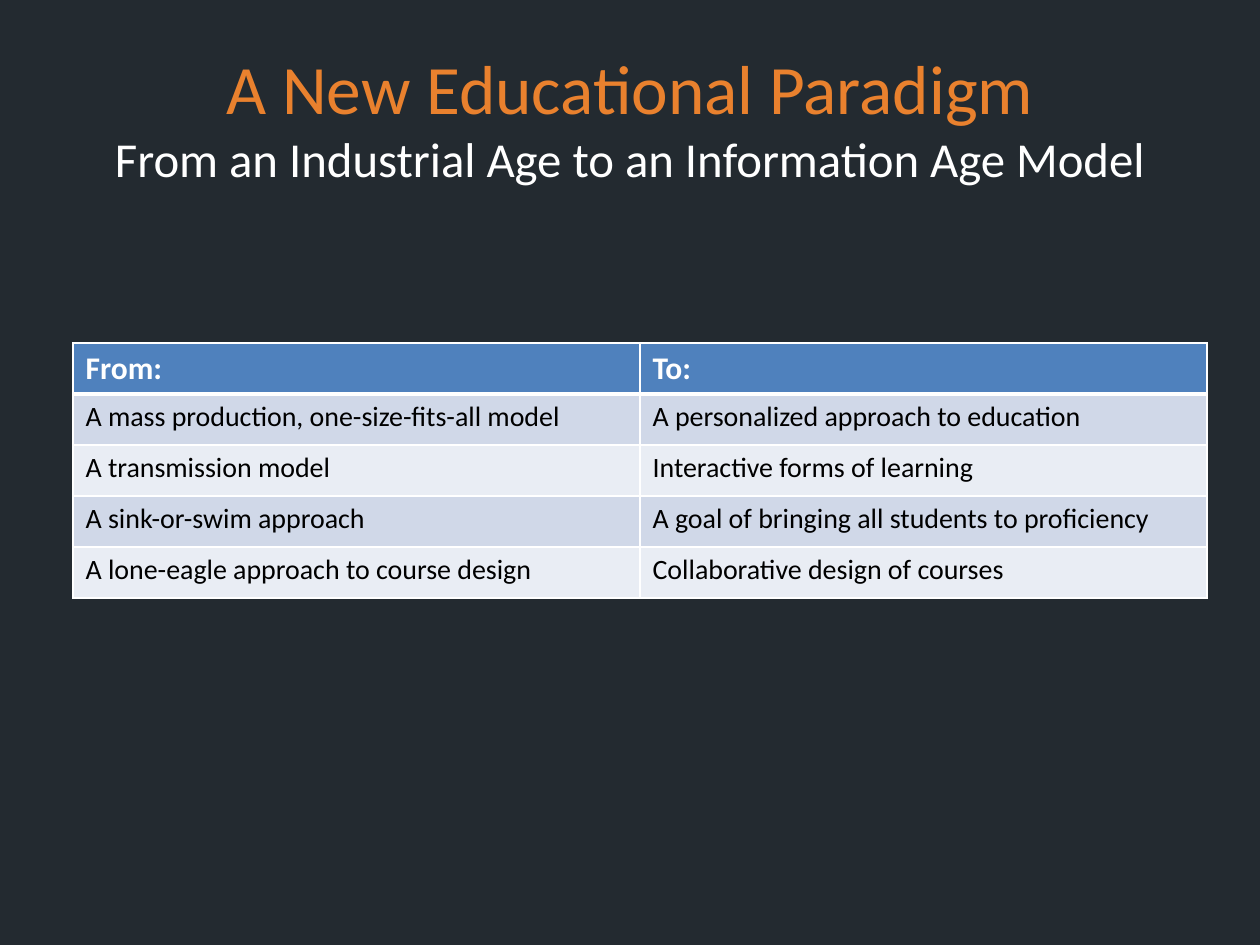
from typing import NamedTuple

from lxml import etree
from pptx import Presentation
from pptx.dml.color import RGBColor
from pptx.enum.text import MSO_ANCHOR, PP_ALIGN
from pptx.oxml.ns import qn
from pptx.util import Emu, Pt

MIDDLE = MSO_ANCHOR.MIDDLE
CENTER = PP_ALIGN.CENTER
EMU_PER_PX = 914400 / 126
FONT = "Calibri"
BACKGROUND = "232A30"
ORANGE = "E9812E"
WHITE = "FFFFFF"
BLACK = "000000"
HEADER_FILL = "4F81BD"
BAND_FILLS = ("D0D8E8", "E9EDF4")
ROW_HEIGHT = 51


class Box(NamedTuple):
    left: int
    top: int
    width: int
    height: int


class Style(NamedTuple):
    size: float
    color: str
    bold: bool = False


class Shift(NamedTuple):
    before: str
    after: str


HEADING = Style(39.6, ORANGE)
SUBHEADING = Style(27.9, WHITE)
HEADER = Style(18, WHITE, True)
BODY = Style(16, BLACK)

SHIFTS = (
    Shift("From:", "To:"),
    Shift("A mass production, one-size-fits-all model",
          "A personalized approach to education"),
    Shift("A transmission model", "Interactive forms of learning"),
    Shift("A sink-or-swim approach",
          "A goal of bringing all students to proficiency"),
    Shift("A lone-eagle approach to course design",
          "Collaborative design of courses"),
)


def px(length: int) -> Emu:
    return Emu(round(length * EMU_PER_PX))


def rgb(color: str) -> RGBColor:
    return RGBColor.from_string(color)


def add_run(paragraph, text: str, style: Style) -> None:
    run = paragraph.add_run()
    run.text = text
    run.font.name = FONT
    run.font.size = Pt(style.size)
    run.font.bold = style.bold
    run.font.color.rgb = rgb(style.color)


def add_title(slide, box: Box) -> None:
    frame = slide.shapes.add_textbox(*map(px, box)).text_frame
    frame.word_wrap = True
    frame.vertical_anchor = MIDDLE
    paragraph = frame.paragraphs[0]
    paragraph.alignment = CENTER
    add_run(paragraph, "A New Educational Paradigm", HEADING)
    paragraph.add_line_break()
    add_run(paragraph, "From an Industrial Age to an Information Age Model",
            SUBHEADING)


def set_borders(cell, bottom_width: int, top_width: int) -> None:
    """Draw white cell borders; widths are in points."""
    properties = cell._tc.get_or_add_tcPr()
    widths = {"lnL": 1, "lnR": 1, "lnT": top_width, "lnB": bottom_width}
    for position, (side, width) in enumerate(widths.items()):
        line = etree.Element(qn(f"a:{side}"), w=str(Pt(width)))
        fill = etree.SubElement(line, qn("a:solidFill"))
        etree.SubElement(fill, qn("a:srgbClr"), val=WHITE)
        properties.insert(position, line)


def add_shift_table(slide, box: Box) -> None:
    table = slide.shapes.add_table(
        len(SHIFTS), len(Shift._fields), *map(px, box)).table
    for row_index, shift in enumerate(SHIFTS):
        table.rows[row_index].height = px(ROW_HEIGHT)
        is_header = row_index == 0
        fill = HEADER_FILL if is_header else BAND_FILLS[(row_index - 1) % 2]
        for column_index, text in enumerate(shift):
            cell = table.cell(row_index, column_index)
            cell.fill.solid()
            cell.fill.fore_color.rgb = rgb(fill)
            set_borders(cell, bottom_width=3 if is_header else 1,
                        top_width=3 if row_index == 1 else 1)
            add_run(cell.text_frame.paragraphs[0], text,
                    HEADER if is_header else BODY)


def main() -> None:
    deck = Presentation()
    deck.slide_width, deck.slide_height = px(1260), px(945)
    slide = deck.slides.add_slide(deck.slide_layouts[6])
    slide.background.fill.solid()
    slide.background.fill.fore_color.rgb = rgb(BACKGROUND)
    add_title(slide, Box(63, 38, 1134, 157))
    add_shift_table(slide, Box(73, 343, 1134, ROW_HEIGHT * len(SHIFTS)))
    deck.save("out.pptx")


if __name__ == "__main__":
    main()
